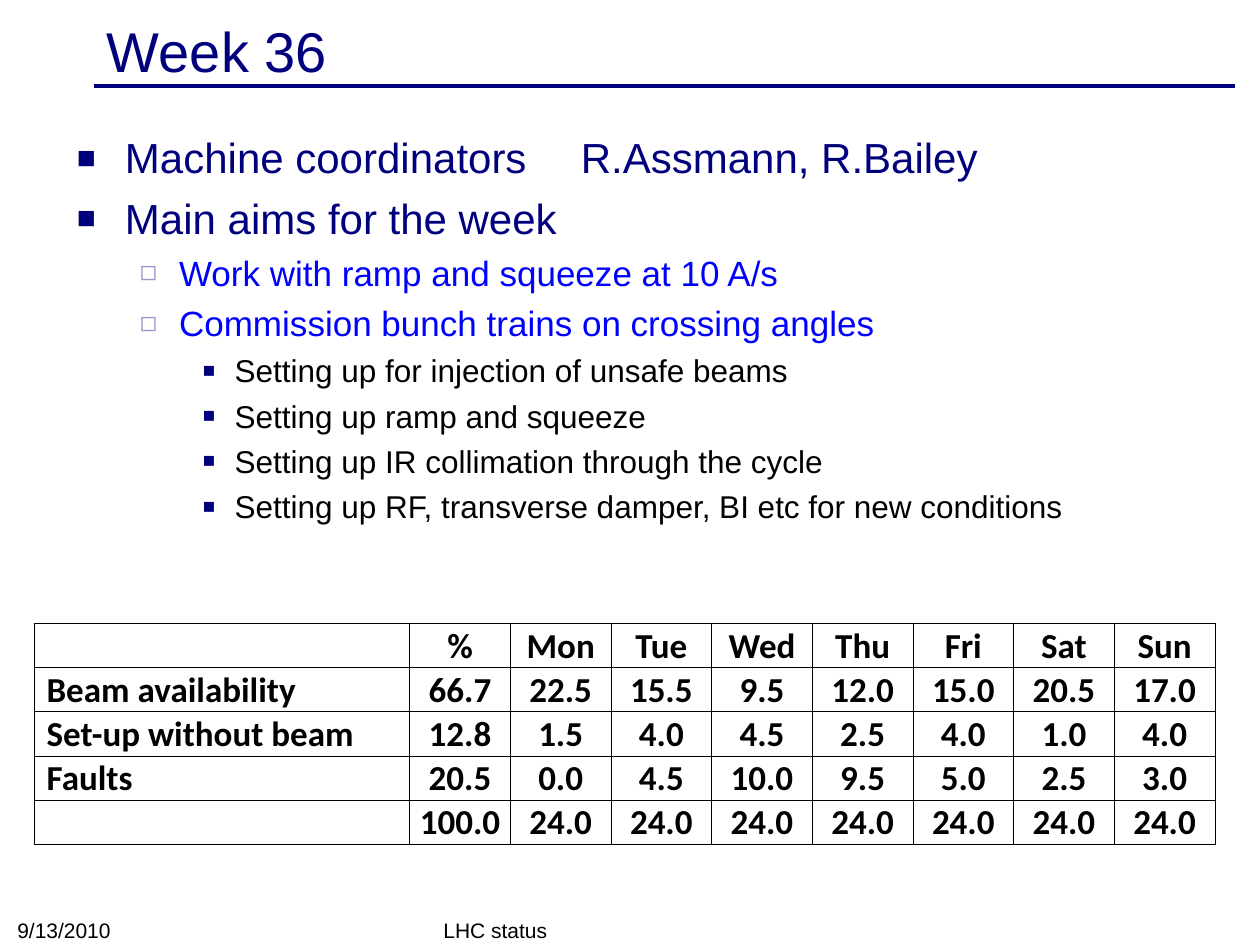
"""Build the Week 36 status slide with aims and a beam time table."""
from dataclasses import dataclass

from lxml.etree import SubElement
from pptx import Presentation
from pptx.dml.color import RGBColor
from pptx.enum.shapes import MSO_CONNECTOR
from pptx.enum.text import MSO_ANCHOR, MSO_AUTO_SIZE, PP_ALIGN
from pptx.oxml.ns import qn
from pptx.util import Cm, Pt


@dataclass(frozen=True)
class Theme:
    font: str = "Arial"
    table_font: str = "Calibri"
    navy: str = "00007D"
    blue: str = "0000FF"
    lavender: str = "9999CC"
    black: str = "000000"
    title_size: int = 32
    level_sizes: tuple = (24, 20, 18)
    table_size: int = 20
    footer_size: int = 12


theme = Theme()


def add_text(paragraph, text, size, color, font=theme.font, bold=False):
    run = paragraph.add_run()
    run.text = text
    run.font.name = font
    run.font.size = Pt(size)
    run.font.bold = bold
    run.font.color.rgb = RGBColor.from_string(color)


def add_element(parent, tag, **attributes):
    return SubElement(parent, qn(tag), attributes)


presentation = Presentation()
presentation.slide_width = Cm(25.4)
presentation.slide_height = Cm(19.05)
slide = presentation.slides.add_slide(presentation.slide_layouts[5])

rule = slide.shapes.add_connector(
    MSO_CONNECTOR.STRAIGHT, Cm(1.9), Cm(1.73), Cm(24.9), Cm(1.73)
)
rule.line.color.rgb = RGBColor.from_string(theme.navy)
rule.line.width = Pt(2)
add_element(rule._element.spPr, "a:effectLst")

title = slide.shapes.title
title.left, title.top, title.width, title.height = Cm(1.9), Cm(0.28), Cm(22.86), Cm(1.45)
title.text_frame.auto_size = MSO_AUTO_SIZE.NONE
title.text_frame.vertical_anchor = MSO_ANCHOR.MIDDLE
title_paragraph = title.text_frame.paragraphs[0]
title_paragraph.alignment = PP_ALIGN.LEFT
add_text(title_paragraph, "Week 36", theme.title_size, theme.navy)

levels = [
    (0.97, 0.97, "■", theme.navy, 75, theme.navy),
    (2.06, 0.79, "◻", theme.lavender, 80, theme.blue),
    (3.18, 0.64, "■", theme.navy, 65, theme.black),
]
aims = [
    (0, "Machine coordinators \tR.Assmann, R.Bailey"),
    (0, "Main aims for the week"),
    (1, "Work with ramp and squeeze at 10 A/s"),
    (1, "Commission bunch trains on crossing angles"),
    (2, "Setting up for injection of unsafe beams"),
    (2, "Setting up ramp and squeeze"),
    (2, "Setting up IR collimation through the cycle"),
    (2, "Setting up RF, transverse damper, BI etc for new conditions"),
]
body = slide.shapes.add_textbox(Cm(1.3), Cm(2.46), Cm(23.14), Cm(15.67))
body.text_frame.word_wrap = True
body.text_frame.margin_top = Cm(0.2)
for index, (level, text) in enumerate(aims):
    margin, hanging, bullet, bullet_color, bullet_percent, text_color = levels[level]
    size = theme.level_sizes[level]
    paragraph = body.text_frame.paragraphs[0] if index == 0 else body.text_frame.add_paragraph()
    paragraph.level = level
    properties = paragraph._p.get_or_add_pPr()
    properties.set("marL", str(Cm(margin)))
    properties.set("indent", str(-Cm(hanging)))
    add_element(add_element(properties, "a:buClr"), "a:srgbClr", val=bullet_color)
    add_element(properties, "a:buSzPct", val=str(bullet_percent * 1000))
    add_element(properties, "a:buFont", typeface=theme.font)
    add_element(properties, "a:buChar", char=bullet)
    if index:
        paragraph.space_before = Pt(round(size * 0.24, 1))
    add_text(paragraph, text, size, text_color)

footers = [("LHC status", 8.69, 8.05), ("9/13/2010", 0.1, 5.92)]
for text, left, width in footers:
    footer = slide.shapes.add_textbox(Cm(left), Cm(18.4), Cm(width), Cm(0.72))
    footer.text_frame.word_wrap = True
    footer.text_frame.vertical_anchor = MSO_ANCHOR.BOTTOM
    add_text(footer.text_frame.paragraphs[0], text, theme.footer_size, theme.black)

rows = [
    ("", "%", "Mon", "Tue", "Wed", "Thu", "Fri", "Sat", "Sun"),
    ("Beam availability", "66.7", "22.5", "15.5", "9.5", "12.0", "15.0", "20.5", "17.0"),
    ("Set-up without beam", "12.8", "1.5", "4.0", "4.5", "2.5", "4.0", "1.0", "4.0"),
    ("Faults", "20.5", "0.0", "4.5", "10.0", "9.5", "5.0", "2.5", "3.0"),
    ("", "100.0") + ("24.0",) * 7,
]
table = slide.shapes.add_table(
    len(rows), len(rows[0]), Cm(0.69), Cm(12.57), Cm(23.81), Cm(4.45)
).table
table.first_row = False
table.horz_banding = False
for index, column in enumerate(table.columns):
    column.width = Cm(2.03) if index else Cm(7.57)
for table_row, values in zip(table.rows, rows):
    table_row.height = Cm(0.89)
    for index, (cell, value) in enumerate(zip(table_row.cells, values)):
        cell.margin_left = Cm(0.03) if index else Cm(0.25)
        cell.margin_right = cell.margin_top = Cm(0.03)
        cell.margin_bottom = 0
        cell.vertical_anchor = MSO_ANCHOR.BOTTOM
        cell_properties = cell._tc.get_or_add_tcPr()
        for side in ("a:lnL", "a:lnR", "a:lnT", "a:lnB"):
            border = add_element(cell_properties, side, w=str(Pt(0.5)))
            add_element(add_element(border, "a:solidFill"), "a:srgbClr", val=theme.black)
        cell.fill.background()
        if value:
            paragraph = cell.text_frame.paragraphs[0]
            paragraph.alignment = PP_ALIGN.CENTER if index else PP_ALIGN.LEFT
            add_text(paragraph, value, theme.table_size, theme.black, theme.table_font, True)

presentation.save("out.pptx")
